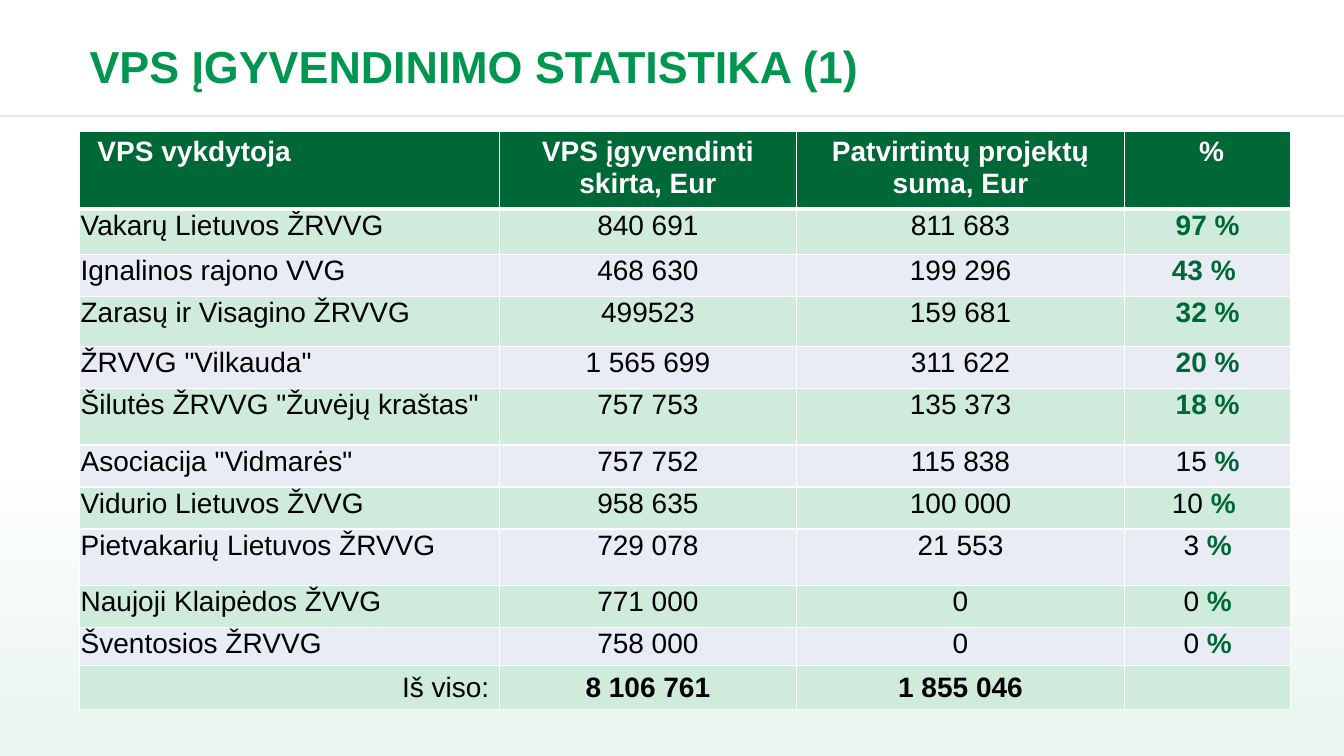
from pptx import Presentation
from pptx.dml.color import RGBColor
from pptx.enum.shapes import MSO_CONNECTOR, MSO_SHAPE
from pptx.enum.text import MSO_ANCHOR, PP_ALIGN
from pptx.oxml.ns import qn
from pptx.util import Pt
from lxml import etree

LEFT, CENTER, RIGHT = PP_ALIGN.LEFT, PP_ALIGN.CENTER, PP_ALIGN.RIGHT
TOP, MIDDLE = MSO_ANCHOR.TOP, MSO_ANCHOR.MIDDLE
RECTANGLE, STRAIGHT = MSO_SHAPE.RECTANGLE, MSO_CONNECTOR.STRAIGHT

WIDTH, HEIGHT = 960, 540
FONT = "Arial"
WHITE, BLACK = "FFFFFF", "000000"
TITLE_GREEN, DARK_GREEN = "009650", "006837"
BANDS = ["CEEBDB", "E9EBF5"]
WIDE_MARGINS = (7.2, 3.6, 7.2, 3.6)
TIGHT_MARGINS = (0.72, 0.72, 0.72, 0)

COLUMN_WIDTHS = [299.8, 212.3, 234.3, 118.8]
ROW_HEIGHTS = [50, 32.4, 30, 36, 30, 40.3, 30, 30, 40.3, 30, 27.4, 28.1]
HEADINGS = [" VPS vykdytoja", "VPS įgyvendinti skirta, Eur",
            "Patvirtintų projektų suma, Eur", " %"]
# Group, allotted sum, approved sum, plain part and green part of the share
GROUPS = [
    ("Vakarų Lietuvos ŽRVVG", "840 691", "811 683", "", "97 %"),
    ("Ignalinos rajono VVG", "468 630", "199 296", "", "43 % "),
    ("Zarasų ir Visagino ŽRVVG", "499523", "159 681", "", "32 %"),
    ('ŽRVVG "Vilkauda"', "1 565 699", "311 622", "", "20 %"),
    ('Šilutės ŽRVVG "Žuvėjų kraštas"', "757 753", "135 373", "", "18 %"),
    ('Asociacija "Vidmarės"', "757 752", "115 838", "15 ", "%"),
    ("Vidurio Lietuvos ŽVVG", "958 635", "100 000", "10 ", "% "),
    ("Pietvakarių Lietuvos ŽRVVG", "729 078", "21 553", "3 ", "%"),
    ("Naujoji Klaipėdos ŽVVG", "771 000", "0", "0 ", "%"),
    ("Šventosios ŽRVVG", "758 000", "0", "0 ", "%"),
]


def rgb(value):
    return RGBColor.from_string(value)


def add_span(para, text, color=BLACK, bold=False, size=20):
    span = para.add_run()
    span.text = text
    span.font.name = FONT
    span.font.size = Pt(size)
    span.font.bold = bold
    span.font.color.rgb = rgb(color)


def add_background(page):
    panel = page.shapes.add_shape(RECTANGLE, 0, 0, Pt(WIDTH), Pt(HEIGHT))
    panel.shadow.inherit = False
    panel.line.fill.background()
    panel.fill.gradient()
    panel.fill.gradient_angle = 270
    for stop, (position, color) in zip(panel.fill.gradient_stops,
                                       [(0.6, WHITE), (1, "E9F5EF")]):
        stop.position = position
        stop.color.rgb = rgb(color)


def add_rule(page, y):
    rule = page.shapes.add_connector(STRAIGHT, 0, Pt(y), Pt(WIDTH), Pt(y))
    rule.line.color.rgb = rgb("E6E6E6")
    rule.line.width = Pt(1)
    etree.SubElement(rule._element.spPr, qn("a:effectLst"))


def add_title(page, text):
    box = page.shapes.add_textbox(Pt(56.9), Pt(17.3), Pt(769), Pt(66.2))
    frame = box.text_frame
    frame.word_wrap = True
    frame.vertical_anchor = MIDDLE
    para = frame.paragraphs[0]
    para.line_spacing = 0.8
    add_span(para, text, TITLE_GREEN, True, 32)


def set_borders(cell, top=1, bottom=1):
    properties = cell._tc.get_or_add_tcPr()
    for side, width in zip("LRTB", (1, 1, top, bottom)):
        line = etree.SubElement(properties, qn(f"a:ln{side}"), w=str(Pt(width)))
        fill = etree.SubElement(line, qn("a:solidFill"))
        etree.SubElement(fill, qn("a:srgbClr"), val=WHITE)


def fill_cell(cell, spans, align, color, margins=TIGHT_MARGINS, anchor=TOP):
    """Each span is a tuple of text, colour and bold; the last two may be left out."""
    cell.fill.solid()
    cell.fill.fore_color.rgb = rgb(color)
    (cell.margin_left, cell.margin_top,
     cell.margin_right, cell.margin_bottom) = map(Pt, margins)
    cell.vertical_anchor = anchor
    para = cell.text_frame.paragraphs[0]
    para.alignment = align
    for span in spans:
        add_span(para, *span)


def add_statistics(page):
    frame = page.shapes.add_table(len(ROW_HEIGHTS), len(COLUMN_WIDTHS), Pt(56.9), Pt(93.9),
                                  Pt(sum(COLUMN_WIDTHS)), Pt(sum(ROW_HEIGHTS)))
    table = frame.table
    table.horz_banding = False
    for column, width in zip(table.columns, COLUMN_WIDTHS):
        column.width = Pt(width)
    for number, (row, height) in enumerate(zip(table.rows, ROW_HEIGHTS)):
        row.height = Pt(height)
        for cell in row.cells:
            set_borders(cell, 3 if number == 1 else 1, 3 if number == 0 else 1)

    aligns = [LEFT, CENTER, CENTER, CENTER]
    for cell, heading, align in zip(table.rows[0].cells, HEADINGS, aligns):
        fill_cell(cell, [(heading, WHITE, True)], align, DARK_GREEN, WIDE_MARGINS)

    for number, (*texts, plain, green) in enumerate(GROUPS):
        share = [(plain,)] if plain else []
        share.append((green, DARK_GREEN, True))
        contents = [[(text,)] for text in texts] + [share]
        for cell, spans, align in zip(table.rows[number + 1].cells, contents, aligns):
            fill_cell(cell, spans, align, BANDS[number % 2])

    label, allotted, approved, share = table.rows[len(GROUPS) + 1].cells
    fill_cell(label, [("Iš viso:",)], RIGHT, BANDS[0], WIDE_MARGINS, MIDDLE)
    for cell, total in [(allotted, "8 106 761"), (approved, "1 855 046")]:
        fill_cell(cell, [(total, BLACK, True)], CENTER, BANDS[0], anchor=MIDDLE)
    fill_cell(share, [], CENTER, BANDS[0])


def main():
    deck = Presentation()
    deck.slide_width, deck.slide_height = Pt(WIDTH), Pt(HEIGHT)
    page = deck.slides.add_slide(deck.slide_layouts[6])
    add_background(page)
    add_rule(page, 82.8)
    add_title(page, "VPS ĮGYVENDINIMO STATISTIKA (1)")
    add_statistics(page)
    deck.save("out.pptx")


if __name__ == "__main__":
    main()
